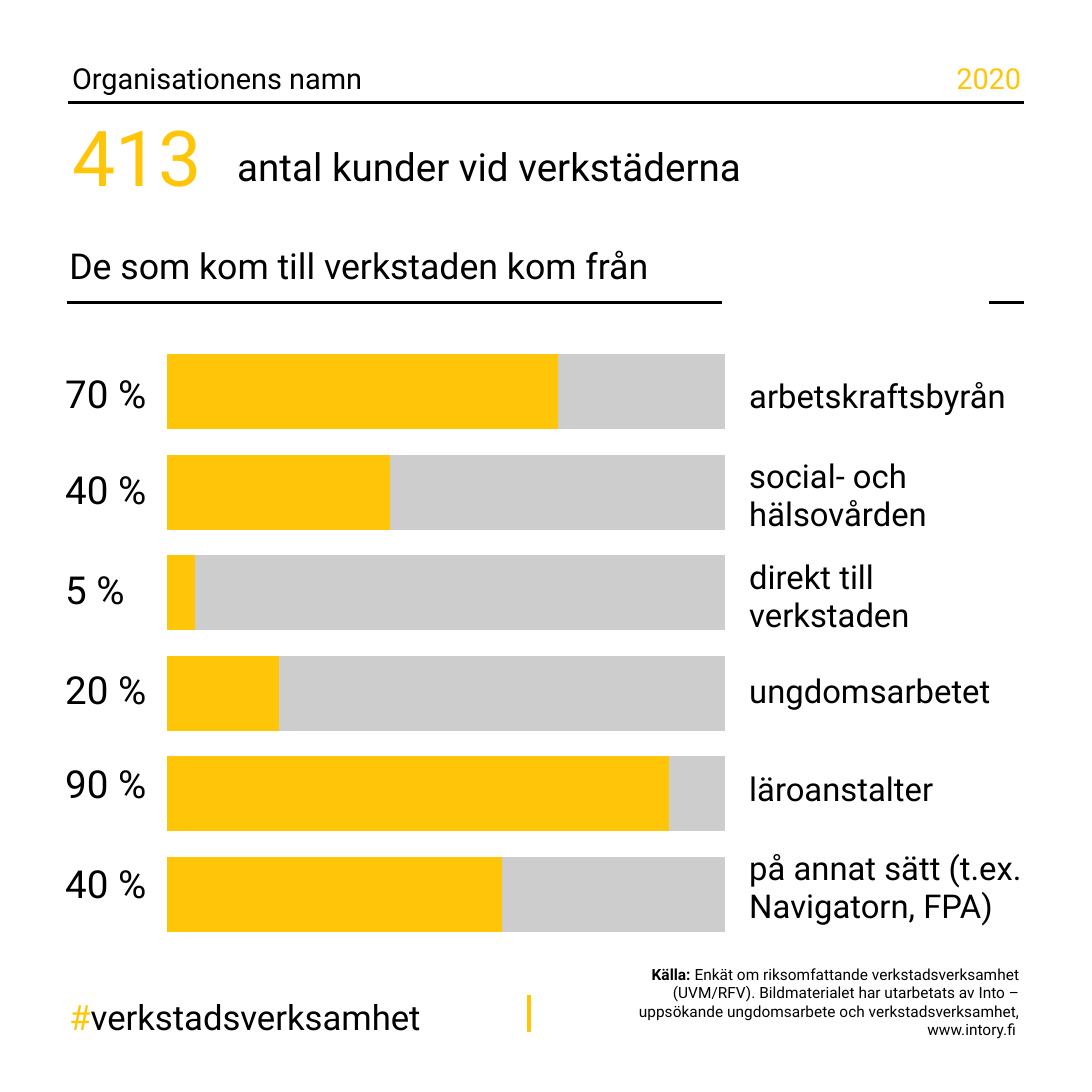
from dataclasses import dataclass

from lxml import etree
from pptx import Presentation
from pptx import util as u
from pptx.chart.data import CategoryChartData
from pptx.dml.color import RGBColor
from pptx.enum import chart as ch, shapes, text
from pptx.oxml.ns import qn

PX = 9144  # 100 px to the inch


@dataclass(frozen=True)
class Theme:
    ink: str = "000000"
    gold: str = "FFC609"
    gray: str = "CDCDCD"
    font: str = "Roboto"
    plain: str = "Arial"
    huge: float = 40
    big: float = 20
    head: float = 18.5
    tag: float = 18
    label: float = 17
    top: float = 15
    note: float = 8
    tick: float = 10


def rgb(code):
    return RGBColor.from_string(code)


class Deck:
    def __init__(self, theme, side):
        self.theme = theme
        self.prs = Presentation()
        self.prs.slide_width = self.prs.slide_height = side * PX
        self.slide = self.prs.slides.add_slide(self.prs.slide_layouts[6])

    def text(self, box, words, size, color=None, pads=(0, 0, 0, 0),
             lead=None, mid=False, right=False):
        """Add a text box; pads run left, top, right, bottom."""
        frame = self.slide.shapes.add_textbox(*(n * PX for n in box)).text_frame
        frame.word_wrap = True
        (frame.margin_left, frame.margin_top,
         frame.margin_right, frame.margin_bottom) = (n * PX for n in pads)
        frame.vertical_anchor = text.MSO_ANCHOR.MIDDLE if mid else text.MSO_ANCHOR.TOP
        frame.text = words
        for par in frame.paragraphs:
            par.alignment = text.PP_ALIGN.RIGHT if right else text.PP_ALIGN.LEFT
            if lead:
                par.line_spacing = lead
            par.font.size = u.Pt(size)
            par.font.name = self.theme.font
            par.font.color.rgb = rgb(color or self.theme.ink)
        return frame.paragraphs[0]

    def line(self, start, end, color, width):
        rule = self.slide.shapes.add_connector(
            shapes.MSO_CONNECTOR.STRAIGHT, *(n * PX for n in start + end))
        rule.line.color.rgb = rgb(color)
        rule.line.width = u.Pt(width)
        etree.SubElement(rule._element.spPr, qn("a:effectLst"))

    def bars(self, box, shares):
        """Add stacked bars of each share and its rest, first share on top."""
        data = CategoryChartData()
        data.categories = [str(n + 1) for n in range(len(shares))]
        data.add_series("Series 1", shares[::-1])
        data.add_series("Series 2", [100 - n for n in shares[::-1]])
        chart = self.slide.shapes.add_chart(
            ch.XL_CHART_TYPE.BAR_STACKED_100, *(n * PX for n in box), data).chart
        chart.has_legend = chart.has_title = False
        chart.font.name = self.theme.plain
        chart.font.size = u.Pt(self.theme.tick)
        chart.font.color.rgb = rgb(self.theme.ink)
        for axis in (chart.category_axis, chart.value_axis):
            axis.has_major_gridlines = False
            axis.visible = False
        plot = chart.plots[0]
        plot.gap_width, plot.overlap = 34, 100
        plot.vary_by_categories = False
        for row, color in zip(plot.series, (self.theme.gold, self.theme.gray)):
            row.format.fill.solid()
            row.format.fill.fore_color.rgb = rgb(color)


# percent, bar share, percent top, label, label top, label height
ROWS = [
    ("70 %", 70, 257, "arbetskraftsbyrån", 266, 39),
    ("40 %", 40, 326, "social- och hälsovården", 328, 57),
    ("5 %", 5, 398, "direkt till\nverkstaden", 401, 57),
    ("20 %", 20, 470, "ungdomsarbetet", 478, 39),
    ("90 %", 90, 538, "läroanstalter", 547, 43),
    ("40 %", 60, 610, "på annat sätt (t.ex. Navigatorn, FPA)", 610, 58),
]


def main():
    look = Theme()
    deck = Deck(look, 787)
    lead = u.Pt(24.8)

    deck.text((50, 34, 427, 31), "Organisationens namn", look.top,
              pads=(2, 0, 4, 12), lead=lead)
    deck.text((637, 34, 99, 31), "2020", look.top, look.gold,
              pads=(2, 0, 0, 12), lead=lead, right=True)
    deck.text((50, 99, 111, 41), "413", look.huge, look.gold,
              pads=(2, 12, 0, 12), lead=lead)
    deck.text((167, 97, 434, 45), "antal kunder vid verkstäderna", look.big,
              pads=(4, 5, 12, 5), mid=True)
    deck.text((50, 169, 497, 44), "De som kom till verkstaden kom från", look.head,
              pads=(0, 5, 12, 5), mid=True)
    for left, right, y in ((49, 738, 74), (48, 520, 218), (713, 738, 218)):
        deck.line((left, y), (right, y), look.ink, 1.5)

    deck.bars((112, 237, 419, 453), [row[1] for row in ROWS])
    for share, _, top, label, y, high in ROWS:
        deck.text((45, top, 88, 61), share, look.big, pads=(2, 14, 0, 31), lead=lead)
        deck.text((520, y, 267, high), label, look.label,
                  pads=(20, 0, 12, 0), lead=u.Pt(20), mid=True)

    tag = deck.text((50, 711, 305, 40), "#", look.tag, pads=(0, 5, 0, 5), lead=1.07)
    tag.runs[0].font.color.rgb = rgb(look.gold)
    tag.add_run().text = "verkstadsverksamhet"
    deck.line((381, 744), (381, 717), look.gold, 2)
    note = deck.text((406, 702, 329, 40), "Källa: ", look.note,
                     pads=(16, 0, 0, 0), mid=True, right=True)
    note.runs[0].font.bold = True
    note.add_run().text = (
        "Enkät om riksomfattande verkstadsverksamhet (UVM/RFV). "
        "Bildmaterialet har utarbetats av Into – uppsökande ungdomsarbete "
        "och verkstadsverksamhet, www.intory.fi ")

    deck.prs.save("out.pptx")


if __name__ == "__main__":
    main()
